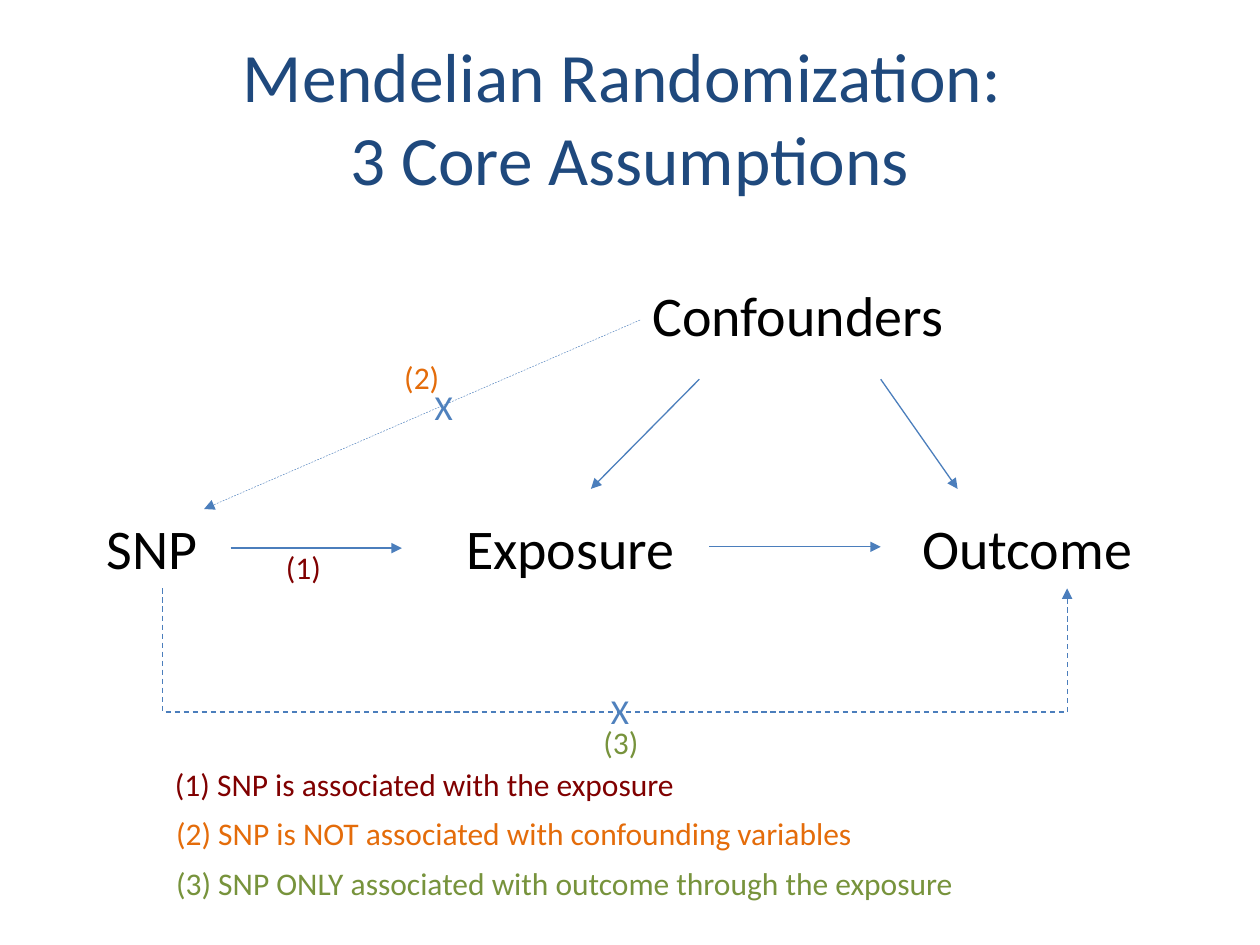
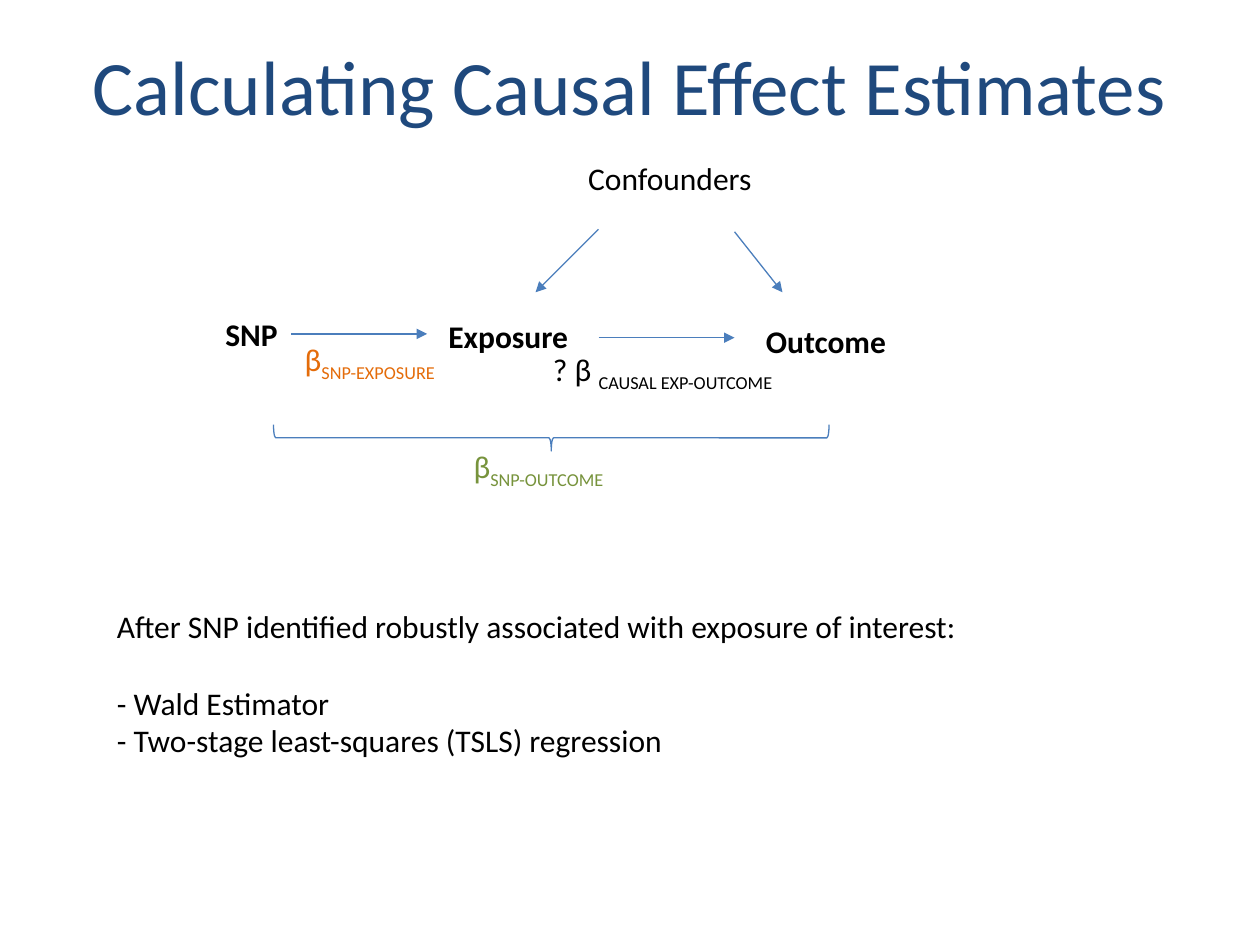
from dataclasses import dataclass

from lxml import etree
from pptx import Presentation
from pptx import util as u
from pptx.dml.color import RGBColor
from pptx.enum import dml, shapes, text
from pptx.oxml.ns import qn


@dataclass(frozen=True)
class Theme:
    font: str = "Calibri"
    title: str = "1F497D"
    ink: str = "000000"
    arrow: str = "4B7EBC"
    cross: str = "4F81BD"
    red: str = "800000"
    orange: str = "E46C0A"
    green: str = "77933C"
    title_size: float = 44
    two_line_title_size: float = 39.6
    node_size: float = 32
    cross_size: float = 20
    body_size: float = 18
    thin: float = 0.25
    line: float = 0.75


theme = Theme()
deck = Presentation()
deck.slide_width, deck.slide_height = u.Inches(10), u.Inches(7.5)
COLUMN = deck.slide_width / 100  # the grid has 100 columns and 75 rows
ROW = deck.slide_height / 75


def add_text(slide, words, left, top, width, height, size, color=theme.ink,
             bold=None, subscript="", wrap=True):
    """Place a text box on the grid; a subscript follows the last word."""
    box = slide.shapes.add_textbox(round(left * COLUMN), round(top * ROW),
                                   round(width * COLUMN), round(height * ROW))
    frame = box.text_frame
    frame.text = words
    frame.word_wrap = wrap
    if subscript:
        span = frame.paragraphs[-1].add_run()
        span.text = subscript
        span.font._element.set("baseline", "-25000")
    for para in frame.paragraphs:
        for span in para.runs:
            span.font.name = theme.font
            span.font.size = u.Pt(size)
            span.font.bold = bold
            span.font.color.rgb = RGBColor.from_string(color)
    return frame


def add_line(slide, start, end, width=theme.line, dashed=False, arrow=True,
             kind=shapes.MSO_CONNECTOR.STRAIGHT):
    line = slide.shapes.add_connector(
        kind, round(start[0] * COLUMN), round(start[1] * ROW),
        round(end[0] * COLUMN), round(end[1] * ROW))
    line.line.color.rgb = RGBColor.from_string(theme.arrow)
    line.line.width = u.Pt(width)
    if dashed:
        line.line.dash_style = dml.MSO_LINE.DASH
    if arrow:
        etree.SubElement(line.line._get_or_add_ln(), qn("a:tailEnd"), type="triangle")
    etree.SubElement(line._element.spPr, qn("a:effectLst"))
    return line


assumptions, estimates = (deck.slides.add_slide(deck.slide_layouts[6]) for _ in range(2))

for slide, words, top, size in (
        (assumptions, "Mendelian Randomization: \v3 Core Assumptions", 3, theme.two_line_title_size),
        (estimates, "Calculating Causal Effect Estimates", 0.5, theme.title_size)):
    title = add_text(slide, words, 5, top, 90, 12.5, size, theme.title)
    title.vertical_anchor = text.MSO_ANCHOR.MIDDLE
    title.paragraphs[0].alignment = text.PP_ALIGN.CENTER

# Slide 1: causal diagram with the three assumptions
for name, left, top, width in (("SNP", 7.5, 40.3, 10.8), ("Exposure", 36, 40.3, 19.5),
                               ("Outcome", 72.2, 40.3, 21.1), ("Confounders", 50.8, 21.8, 27.4)):
    add_text(assumptions, name, left, top, width, 6.4, theme.node_size)

for start, end in (((18.3, 43.5), (31.9, 43.5)), ((56.3, 43.4), (69.9, 43.4)),
                   ((55.5, 30.1), (46.9, 38.8)), ((69.9, 30.1), (76, 38.8))):
    add_line(assumptions, start, end)
add_line(assumptions, (50.8, 25.4), (16.2, 40.4), theme.thin, dashed=True)

# Forbidden path from SNP to Outcome: down and across, then up
snp_x, outcome_x, node_bottom, path_bottom = 12.9, 84.7, 46.7, 56.5
middle_x, middle_y = (snp_x + outcome_x) / 2, (node_bottom + path_bottom) / 2
half_run, half_drop = (outcome_x - snp_x) / 2, (path_bottom - node_bottom) / 2
elbow = add_line(assumptions, (middle_x + half_drop, middle_y - half_run),
                 (middle_x - half_drop, middle_y + half_run),
                 dashed=True, arrow=False, kind=shapes.MSO_CONNECTOR.ELBOW)
elbow._element.spPr.find(qn("a:prstGeom")).set("prst", "bentConnector2")
elbow._element.spPr.find(qn("a:xfrm")).set("rot", str(270 * 60000))
add_line(assumptions, (outcome_x, path_bottom), (outcome_x, node_bottom), dashed=True)

for left, top in ((33.5, 30.1), (47.5, 54.2)):
    add_text(assumptions, "X", left, top, 3.1, 4.4, theme.cross_size, theme.cross)

for number, (statement, color, mark_left, mark_top, left, width) in enumerate((
        ("SNP is associated with the exposure", theme.red, 21.7, 43, 12.9, 42.1),
        ("SNP is NOT associated with confounding variables", theme.orange, 31.1, 27.9, 13, 56.4),
        ("SNP ONLY associated with outcome through the exposure", theme.green,
         46.9, 56.9, 13, 64.7))):
    mark = f"({number + 1})"
    add_text(assumptions, mark, mark_left, mark_top, 4.8, 4, theme.body_size, color, wrap=False)
    add_text(assumptions, f"{mark} {statement}", left, 60.2 + 3.95 * number, width, 4,
             theme.body_size, color, wrap=False)

# Slide 2: the same diagram with its effect estimates
for name, left, top, width, bold in (
        ("SNP", 16.9, 24.5, 10.8, True), ("Exposure", 34.6, 24.7, 19.5, True),
        ("Outcome", 59.8, 25.1, 21.1, True), ("Confounders", 45.7, 12.1, 16.4, None)):
    add_text(estimates, name, left, top, width, 4, theme.body_size, bold=bold)

for start, end in (((23.1, 26.5), (33.9, 26.5)), ((47.5, 26.8), (58.3, 26.8)),
                   ((47.5, 18.2), (42.5, 23.2)), ((58.3, 18.4), (62.1, 23.2))):
    add_line(estimates, start, end)

for symbol, effect, left, top, width, color in (
        ("β", "SNP-OUTCOME", 36.6, 35, 13.9, theme.green),
        ("β", "SNP-EXPOSURE", 23.2, 26.5, 13.9, theme.orange),
        ("? β ", "CAUSAL EXP-OUTCOME", 42.9, 27.3, 21.8, theme.ink)):
    add_text(estimates, symbol, left, top, width, 4, theme.body_size, color,
             subscript=effect, wrap=False)

brace = estimates.shapes.add_shape(
    shapes.MSO_SHAPE.RIGHT_BRACE, round(42.7 * COLUMN), round(12.7 * ROW),
    round(2.1 * COLUMN), round(44.1 * ROW))
brace.rotation = 90
brace.shadow.inherit = False
brace.fill.background()
brace.line.color.rgb = RGBColor.from_string(theme.arrow)
brace.line.width = u.Pt(theme.line)

methods = add_text(
    estimates,
    "After SNP identified robustly associated with exposure of interest:\n"
    "- Wald Estimator\n"
    "- Two-stage least-squares (TSLS) regression",
    8.3, 47.7, 69.6, 13.1, theme.body_size, wrap=False)
methods.paragraphs[1].space_before = u.Pt(22)

deck.save("out.pptx")
